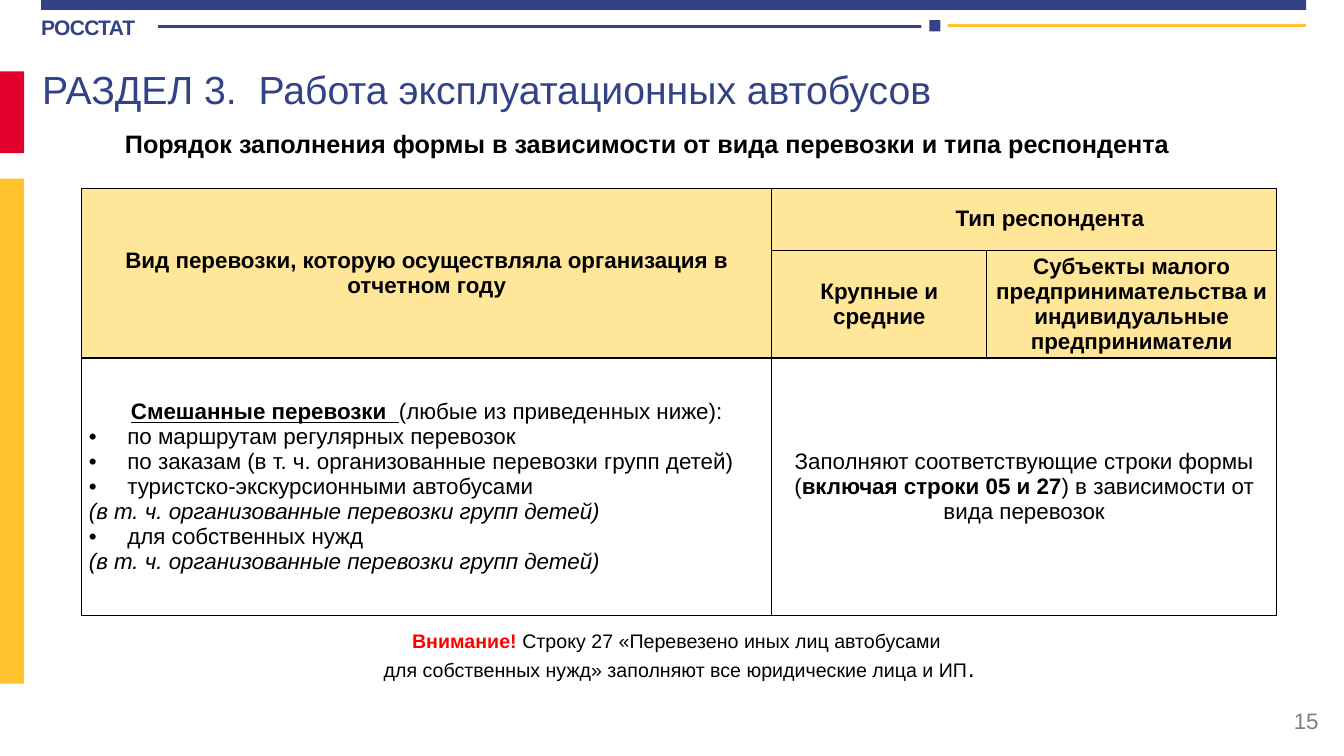
from pptx import Presentation
from pptx import util as u
from pptx.dml.color import RGBColor
from pptx.enum import shapes, text
from pptx.oxml import parse_xml
from pptx.oxml.ns import nsdecls, qn
from lxml import etree

Cm, Pt = u.Cm, u.Pt
NAVY = RGBColor(0x33, 0x42, 0x86)
RED = RGBColor(0xE1, 0x00, 0x2B)
GOLD = RGBColor(0xFF, 0xC3, 0x2E)
SAND = RGBColor(0xFF, 0xE6, 0x99)
WHITE = RGBColor(0xFF, 0xFF, 0xFF)
BLACK = RGBColor(0, 0, 0)
GREY = RGBColor(0x80, 0x80, 0x80)
ALERT = RGBColor(0xFF, 0, 0)

LEFT, MID, RIGHT = text.PP_ALIGN.LEFT, text.PP_ALIGN.CENTER, text.PP_ALIGN.RIGHT
JUST = text.PP_ALIGN.JUSTIFY
CENTRE, TOP = text.MSO_ANCHOR.MIDDLE, text.MSO_ANCHOR.TOP
BOLD, ITALIC = {"bold": True}, {"italic": True}


def apply(item, form):
    for name, value in form.items():
        setattr(item, name, value)


def write(frame, paras, size, color=BLACK, **form):
    """Each paragraph is (alignment, [(words, font format), ...])."""
    apply(frame, {"word_wrap": True, **form})
    for i, (align, runs) in enumerate(paras):
        para = frame.add_paragraph() if i else frame.paragraphs[0]
        para.alignment = align
        for words, look in runs:
            look = {"name": "Arial", "size": Pt(size), "color": color, **look}
            tint = look.pop("color")
            for n, line in enumerate(words.split("\n")):
                if n:
                    para.add_line_break()
                run = para.add_run()
                run.text = line
                run.font.color.rgb = tint
                apply(run.font, look)


def label(slide, box, paras, size, color=BLACK, **form):
    frame = slide.shapes.add_textbox(*map(Cm, box)).text_frame
    write(frame, paras, size, color, **form)
    return frame


def block(slide, box, color):
    shape = slide.shapes.add_shape(shapes.MSO_SHAPE.RECTANGLE, *map(Cm, box))
    shape.shadow.inherit = False
    shape.fill.solid()
    shape.fill.fore_color.rgb = color
    shape.line.fill.background()
    return shape


def rule(slide, x, y, wide, color):
    line = slide.shapes.add_connector(
        shapes.MSO_CONNECTOR.STRAIGHT, Cm(x), Cm(y), Cm(x + wide), Cm(y))
    line.line.color.rgb = color
    line.line.width = Pt(2)
    etree.SubElement(line._element.spPr, qn("a:effectLst"))


def header(slide, x, y, wide):
    # Top bar and agency name
    block(slide, (x, y, wide, 0.25), NAVY)
    frame = label(slide, (x, y + 0.33, 2.9, 0.8), [(LEFT, [("РОССТАТ", BOLD)])],
                  15, NAVY, margin_left=0, margin_right=0,
                  margin_top=Cm(0.03), margin_bottom=0)
    frame.paragraphs[0].runs[0].font._element.set("spc", "-50")
    # Two rules parted by a square
    rule(slide, x + 2.95, y + 0.66, 19.7, NAVY)
    rule(slide, x + 22.3, y + 0.64, 9.58, GOLD)
    block(slide, (x + 22.18, y + 0.51, 0.66, 0.28), WHITE)
    block(slide, (x + 22.38, y + 0.51, 0.28, 0.28), NAVY)


def stripe(slide, x, y, wide):
    block(slide, (x, y, wide, 2.06), RED)
    block(slide, (x, y + 2.7, wide, 12.73), GOLD)


def heading(slide, x, y, wide):
    title = slide.shapes.title
    apply(title, dict(zip(("left", "top", "width", "height"),
                          map(Cm, (x, y, wide, 1.47)))))
    write(title.text_frame,
          [(LEFT, [("РАЗДЕЛ 3.  Работа эксплуатационных автобусов", {})])],
          28, NAVY, vertical_anchor=CENTRE, auto_size=text.MSO_AUTO_SIZE.NONE)
    label(slide, (x + 2.09, y + 1.62, 29.26, 1.02),
          [(LEFT, [("Порядок заполнения формы в зависимости от вида перевозки "
                    "и типа респондента", BOLD)])], 18)


def border(cell):
    props = cell._tc.get_or_add_tcPr()
    for i, side in enumerate(("lnL", "lnR", "lnT", "lnB")):
        props.insert(i, parse_xml(
            f'<a:{side} {nsdecls("a")} w="12700"><a:solidFill>'
            f'<a:srgbClr val="{BLACK}"/></a:solidFill></a:{side}>'))


def indent(para, left, first, bullet=None):
    props = para._p.get_or_add_pPr()
    props.set("marL", str(Cm(left)))
    props.set("indent", str(Cm(first)))
    if bullet:
        etree.SubElement(props, qn("a:buFont")).set("typeface", "Arial")
        etree.SubElement(props, qn("a:buChar")).set("char", bullet)


def grid(slide, x, y):
    cols, rows = (17.39, 5.42, 7.3), (1.57, 2.52, 6.5)
    table = slide.shapes.add_table(
        len(rows), len(cols), Cm(x), Cm(y), Cm(sum(cols)), Cm(sum(rows))).table
    apply(table, {"first_row": False, "horz_banding": False})
    for col, wide in zip(table.columns, cols):
        col.width = Cm(wide)
    for row, high in zip(table.rows, rows):
        row.height = Cm(high)

    # Fills, borders and margins
    for r in range(len(rows)):
        for c in range(len(cols)):
            cell = table.cell(r, c)
            side = Cm(0.18 if r == 2 else 0.15)
            apply(cell, {"vertical_anchor": CENTRE, "margin_left": side,
                         "margin_right": side, "margin_top": 0, "margin_bottom": 0})
            cell.fill.solid()
            cell.fill.fore_color.rgb = WHITE if r == 2 else SAND
            border(cell)
    for first, last in (((0, 0), (1, 0)), ((0, 1), (0, 2)), ((2, 1), (2, 2))):
        table.cell(*first).merge(table.cell(*last))

    # Head cells
    heads = {
        (0, 0): "Вид перевозки, которую осуществляла организация в отчетном году",
        (0, 1): "Тип респондента",
        (1, 1): "Крупные и средние",
        (1, 2): "Субъекты малого предпринимательства и индивидуальные предприниматели",
    }
    for spot, words in heads.items():
        write(table.cell(*spot).text_frame, [(MID, [(words, BOLD)])], 16)
    indent(table.cell(0, 1).text_frame.paragraphs[0], 0, 1.3)

    # Kinds of transport, with bullets
    note = "(в т. ч. организованные перевозки групп детей)"
    kinds = [("по маршрутам регулярных перевозок", {}),
             ("по заказам (в т. ч. организованные перевозки групп детей)", {}),
             ("туристско-экскурсионными автобусами", {}), (note, ITALIC),
             ("для собственных нужд", {}), (note, ITALIC)]
    lead = (MID, [("Смешанные перевозки  ", {"bold": True, "underline": True}),
                  ("(любые из приведенных ниже):", {})])
    frame = table.cell(2, 0).text_frame
    write(frame, [lead] + [(JUST, [kind]) for kind in kinds], 16)
    for para, (_, look) in zip(frame.paragraphs[1:], kinds):
        if not look:
            indent(para, 0.97, -0.97, "•")

    # What to fill in
    write(table.cell(2, 1).text_frame, [(MID, [
        ("Заполняют соответствующие строки формы (", {}),
        ("включая строки 05 и 27", BOLD),
        (") в зависимости от вида перевозок", {})])], 16)


def footer(slide, x, y, wide):
    # Warning
    frame = block(slide, (x, y, wide, 2.39), WHITE).text_frame
    write(frame, [
        (MID, [("Внимание! ", {"bold": True, "color": ALERT}),
               ("Строку 27 «Перевезено иных лиц автобусами \n"
                "для собственных нужд» заполняют все юридические лица и ИП", {}),
               (".", {"size": Pt(18)})])], 14, vertical_anchor=TOP)
    # Page number
    label(slide, (x + 23.8, y + 1.93, 7.62, 1.02), [(RIGHT, [("15", {})])],
          16, GREY, vertical_anchor=CENTRE)


def main():
    deck = Presentation()
    apply(deck, {"slide_width": Cm(33.87), "slide_height": Cm(19.05)})
    slide = deck.slides.add_slide(deck.slide_layouts[5])
    header(slide, 1.04, 0, 31.88)
    stripe(slide, 0, 1.8, 0.61)
    heading(slide, 0.81, 1.5, 30.66)
    grid(slide, 2.06, 4.74)
    footer(slide, 2.06, 15.72, 30.12)
    deck.save("out.pptx")


if __name__ == "__main__":
    main()
